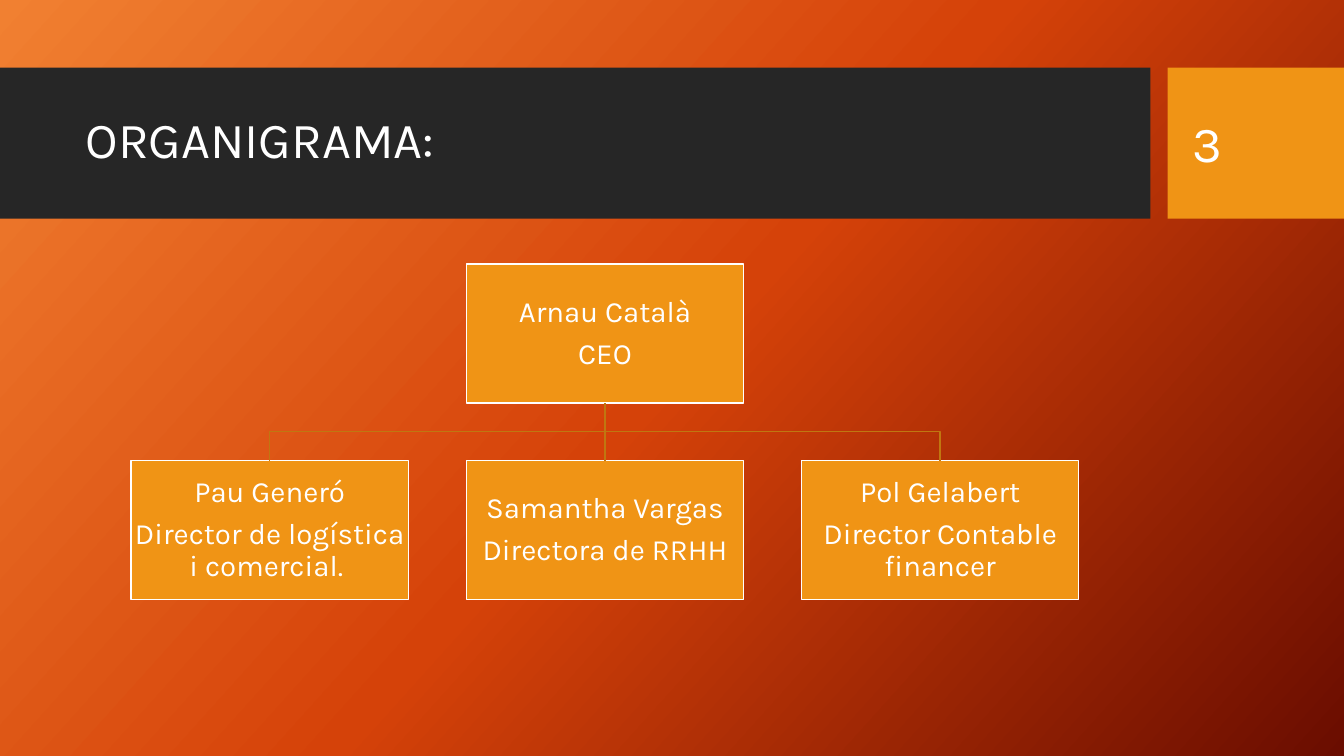
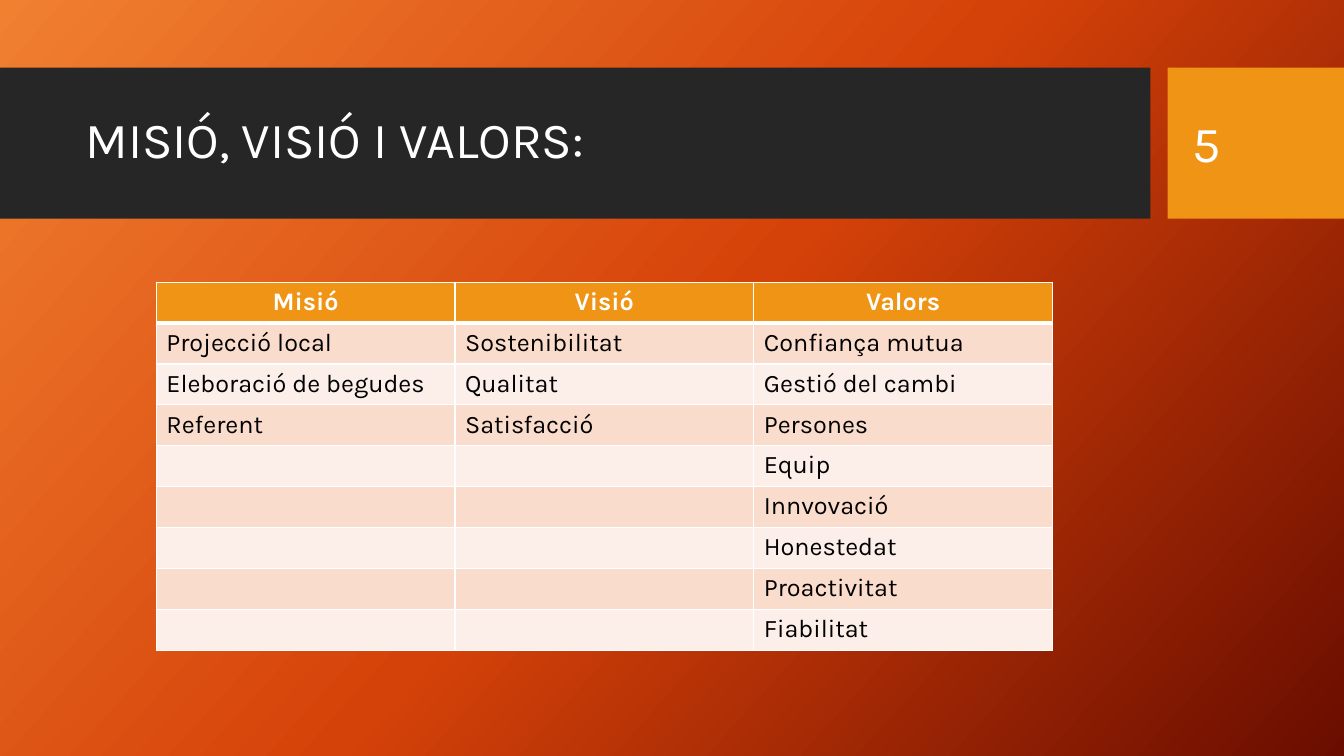
from copy import deepcopy
from itertools import zip_longest

from lxml.etree import SubElement
from pptx import Presentation
from pptx.dml.color import RGBColor
from pptx.enum.shapes import MSO_CONNECTOR as CONN, MSO_SHAPE as SHAPE
from pptx.enum.text import MSO_ANCHOR as ANCHOR, PP_ALIGN as ALIGN
from pptx.oxml.ns import qn
from pptx.util import Inches, Pt

FONT = "Karla"
WHITE, BLACK, DARK, ORANGE, LINK = "FFFFFF", "000000", "262626", "F09415", "C07711"
BANDS = ["F9DCCC", "FCEEE8"]
BACKGROUND = [(0, "F18031"), (0.5, "D54209"), (1, "6A0D00")]


def rgb(value):
    return RGBColor.from_string(value)


def write(tf, text, size, color=WHITE, align=ALIGN.LEFT, bold=False):
    """Fill a text frame and format every paragraph alike."""
    tf.text = text
    tf.word_wrap = True
    for p in tf.paragraphs:
        p.alignment = align
        for r in p.runs:
            r.font.name, r.font.size, r.font.bold = FONT, Pt(size), bold
            r.font.color.rgb = rgb(color)


prs = Presentation()
prs.slide_width, prs.slide_height = Inches(13.33), Inches(7.5)

# Gradient background, set once on the master
master = prs.slide_master
fill = master.background.fill
fill.gradient()
fill.gradient_angle = 360 - 42
gs_list = master.element.find(".//" + qn("a:gsLst"))
gs_list.append(deepcopy(gs_list[0]))
for stop, (position, color) in zip(fill.gradient_stops, BACKGROUND):
    stop.position = position
    stop.color.rgb = rgb(color)

# Title band and page number on both slides
slides = []
for title, number in [("ORGANIGRAMA:", "3"), ("MISIÓ, VISIÓ I VALORS:", "5")]:
    s = prs.slides.add_slide(prs.slide_layouts[6])
    slides.append(s)
    for left, width, color in [(0, 11.41, DARK), (11.58, 1.75, ORANGE)]:
        band = s.shapes.add_shape(SHAPE.RECTANGLE, Inches(left), Inches(0.67),
                                  Inches(width), Inches(1.5))
        band.shadow.inherit = False
        band.fill.solid()
        band.fill.fore_color.rgb = rgb(color)
        band.line.fill.background()
    for text, left, width, spacing in [(title, 0.75, 10.5, 0.9), (number, 11.73, 1.26, 1)]:
        box = s.shapes.add_textbox(Inches(left), Inches(0.82), Inches(width), Inches(1.19))
        tf = box.text_frame
        write(tf, text, 36)
        tf.vertical_anchor = ANCHOR.MIDDLE
        tf.paragraphs[0].line_spacing = spacing
chart_slide, values_slide = slides

# Organisation chart: three columns, the CEO above the middle one
LEFT, LAST_LEFT, BOX_W, BOX_H = 1.3, 7.95, 2.75, 1.38
PITCH = (LAST_LEFT - LEFT) / 2
CEO_TOP, TEAM_TOP, BUS_Y = 2.62, 4.57, 4.28
NAME_SIZE = 21
people = [
    (1, CEO_TOP, "Arnau Català\nCEO"),
    (0, TEAM_TOP, "Pau Generó\nDirector de logística i comercial. "),
    (1, TEAM_TOP, "Samantha Vargas\nDirectora de RRHH"),
    (2, TEAM_TOP, "Pol Gelabert\nDirector Contable financer"),
]
boxes = []
for column, top, text in people:
    box = chart_slide.shapes.add_shape(SHAPE.RECTANGLE, Inches(LEFT + column * PITCH),
                                       Inches(top), Inches(BOX_W), Inches(BOX_H))
    box.shadow.inherit = False
    box.fill.solid()
    box.fill.fore_color.rgb = rgb(ORANGE)
    box.line.color.rgb = rgb(WHITE)
    box.line.width = Pt(1)
    tf = box.text_frame
    tf.margin_left = tf.margin_right = tf.margin_top = tf.margin_bottom = Inches(0.01)
    tf.vertical_anchor = ANCHOR.MIDDLE
    write(tf, text, NAME_SIZE, align=ALIGN.CENTER)
    for p in tf.paragraphs:
        p.line_spacing = 0.9
        p.space_after = Pt(NAME_SIZE * 0.35)
    boxes.append(box)

# Straight trunk to the middle box, bent branches to the outer ones
ceo, logistics, staff, finance = boxes
x_left, x_mid, x_right = [LEFT + i * PITCH + BOX_W / 2 for i in range(3)]
ceo_bottom = CEO_TOP + BOX_H
trunk = chart_slide.shapes.add_connector(CONN.STRAIGHT, Inches(x_mid), Inches(ceo_bottom),
                                         Inches(x_mid), Inches(TEAM_TOP))
trunk.begin_connect(ceo, 2)
trunk.end_connect(staff, 0)
SubElement(trunk.element.spPr, qn("a:effectLst"))
links = [trunk]
for x in (x_left, x_right):
    builder = chart_slide.shapes.build_freeform(Inches(x_mid), Inches(ceo_bottom))
    bends = [(x_mid, BUS_Y), (x, BUS_Y), (x, TEAM_TOP)]
    builder.add_line_segments([(Inches(px), Inches(py)) for px, py in bends], close=False)
    branch = builder.convert_to_shape()
    branch.shadow.inherit = False
    branch.fill.background()
    links.append(branch)
for link in links:
    link.line.color.rgb = rgb(LINK)
    link.line.width = Pt(1)

# Table of mission, vision and values
columns = [
    ["Misió", "Projecció local", "Eleboració de begudes", "Referent"],
    ["Visió", "Sostenibilitat", "Qualitat", "Satisfacció"],
    ["Valors", "Confiança mutua", "Gestió del cambi", "Persones", "Equip",
     "Innvovació", "Honestedat", "Proactivitat", "Fiabilitat"],
]
rows = list(zip_longest(*columns, fillvalue=""))
table = values_slide.shapes.add_table(len(rows), len(columns), Inches(1.55), Inches(2.8),
                                      Inches(8.89), Inches(3.65)).table
for i, row in enumerate(rows):
    header = i == 0
    for j, text in enumerate(row):
        cell = table.cell(i, j)
        if header:
            write(cell.text_frame, text, 18, align=ALIGN.CENTER, bold=True)
        elif text:
            write(cell.text_frame, text, 18, BLACK)
        tc_pr = cell._tc.get_or_add_tcPr()
        widths = {"L": 1, "R": 1, "T": 3 if i == 1 else 1, "B": 3 if header else 1}
        for side, width in widths.items():
            ln = SubElement(tc_pr, qn("a:ln" + side), w=str(Pt(width)))
            SubElement(SubElement(ln, qn("a:solidFill")), qn("a:srgbClr"), val=WHITE)
        cell.fill.solid()
        cell.fill.fore_color.rgb = rgb(ORANGE if header else BANDS[(i - 1) % 2])

prs.save("out.pptx")
